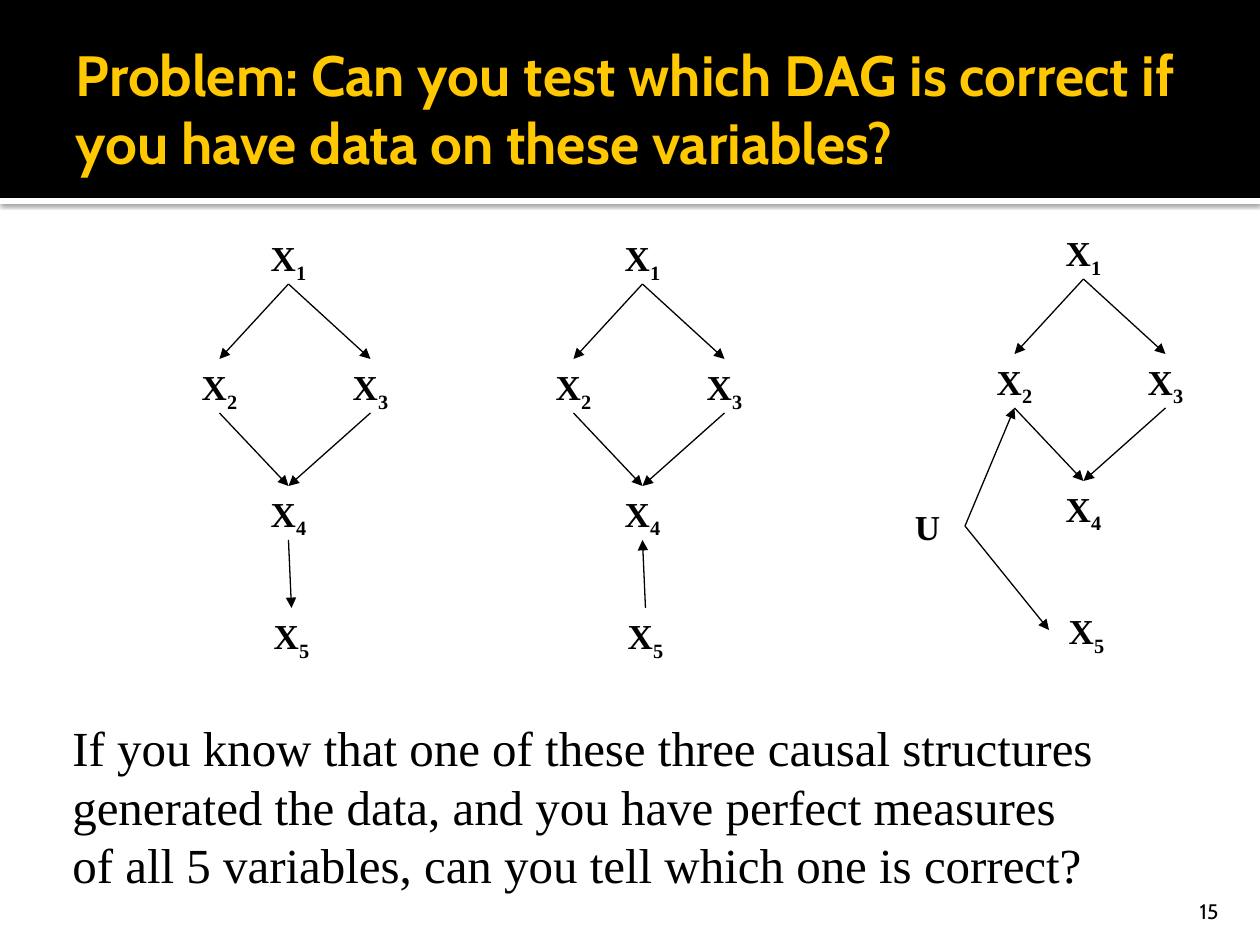
from lxml import etree
from pptx import Presentation
from pptx.dml.color import RGBColor
from pptx.enum.shapes import MSO_CONNECTOR as CONN, MSO_SHAPE as SHAPE
from pptx.enum.text import MSO_ANCHOR as ANCHOR, MSO_AUTO_SIZE as AUTO, PP_ALIGN as ALIGN
from pptx.oxml import parse_xml
from pptx.oxml.ns import nsdecls, qn
from pptx.util import Pt

PX = 914400 / 126
COLORS = {"black": "000000", "white": "FFFFFF", "gold": "FFC800"}
SERIF, SANS = "Times New Roman", "Cabin"
TOP, LEFT, BOTTOM, RIGHT = range(4)

NODES = {"X1": (0, 0), "X2": (-69, 129), "X3": (82, 129), "X4": (0, 256), "X5": (3, 378)}
DIAMOND = [
    ("X1", BOTTOM, "X2", TOP),
    ("X1", BOTTOM, "X3", TOP),
    ("X2", BOTTOM, "X4", TOP),
    ("X3", BOTTOM, "X4", TOP),
]
GRAPHS = [
    ((251, 230), {}, [("X4", BOTTOM, "X5", TOP)]),
    ((605, 230), {}, [("X5", TOP, "X4", BOTTOM)]),
    ((1046, 225), {"U": (-156, 274)}, [("U", RIGHT, "X2", BOTTOM), ("U", RIGHT, "X5", LEFT)]),
]


def px(*values):
    return [round(v * PX) for v in values]


def rgb(name):
    return RGBColor.from_string(COLORS[name])


def add_text(slide, box, text, size, font=SERIF, color="black", bold=False, sub="",
             align=ALIGN.LEFT, anchor=ANCHOR.TOP, before=0, insets=None, auto=AUTO.NONE):
    sp = slide.shapes.add_textbox(*px(*box))
    tf = sp.text_frame
    tf.word_wrap, tf.auto_size, tf.vertical_anchor = True, auto, anchor
    if insets:
        tf.margin_left, tf.margin_top, tf.margin_right, tf.margin_bottom = px(*insets)
    p = tf.paragraphs[0]
    p.alignment, p.space_before = align, Pt(before)
    for part in filter(None, (text, sub)):
        r = p.add_run()
        r.text = part
        r.font.name, r.font.size, r.font.bold = font, Pt(size), bold
        r.font.color.rgb = rgb(color)
    if sub:
        r.font._element.set("baseline", "-25000")
    return sp


def add_band(slide, box, color, shadow=False):
    sp = slide.shapes.add_shape(SHAPE.RECTANGLE, *px(*box))
    sp.fill.solid()
    sp.fill.fore_color.rgb = rgb(color)
    sp.line.fill.background()
    sp.shadow.inherit = False
    if shadow:
        effects = sp._element.spPr.find(qn("a:effectLst"))
        effects.append(parse_xml(
            f'<a:outerShdw {nsdecls("a")} blurRad="31750" dist="10160" dir="5400000" rotWithShape="0">'
            f'<a:srgbClr val="{COLORS["black"]}"><a:alpha val="60000"/></a:srgbClr></a:outerShdw>'))


def add_arrow(slide, start, start_side, end, end_side):
    line = slide.shapes.add_connector(CONN.STRAIGHT, 0, 0, 0, 0)
    line.begin_connect(start, start_side)
    line.end_connect(end, end_side)
    line.line.color.rgb = rgb("black")
    line.line.width = Pt(0.75)
    etree.SubElement(line.line._get_or_add_ln(), qn("a:tailEnd"), type="triangle")
    etree.SubElement(line._element.spPr, qn("a:effectLst"))


def add_graph(slide, origin, extra_nodes, extra_edges):
    x, y = origin
    nodes = {
        name: add_text(slide, (x + dx, y + dy, 75, 54), name[0], 20, sub=name[1:], bold=True,
                       align=ALIGN.CENTER, auto=AUTO.SHAPE_TO_FIT_TEXT)
        for name, (dx, dy) in {**NODES, **extra_nodes}.items()
    }
    for start, start_side, end, end_side in DIAMOND + extra_edges:
        add_arrow(slide, nodes[start], start_side, nodes[end], end_side)


def main():
    prs = Presentation()
    prs.slide_width, prs.slide_height = px(1260, 945)
    slide = prs.slides.add_slide(prs.slide_layouts[6])
    add_band(slide, (0, 198, 1260, 6), "white", shadow=True)
    add_band(slide, (0, 0, 1260, 198), "black")
    add_text(slide, (63, 22, 1134, 172),
             "Problem: Can you test which DAG is correct if you have data on these variables?",
             32.4, SANS, "gold", bold=True, anchor=ANCHOR.MIDDLE, insets=(13, 6, 6, 6))
    for graph in GRAPHS:
        add_graph(slide, *graph)
    add_text(slide, (60, 711, 1056, 190),
             "If you know that one of these three causal structures generated the data, "
             "and you have perfect measures of all 5 variables, can you tell which one is correct?",
             28, before=5.6, auto=AUTO.SHAPE_TO_FIT_TEXT)
    add_text(slide, (1130, 892, 101, 38), "15", 12, SANS, align=ALIGN.RIGHT, anchor=ANCHOR.MIDDLE)
    prs.save("out.pptx")


if __name__ == "__main__":
    main()
